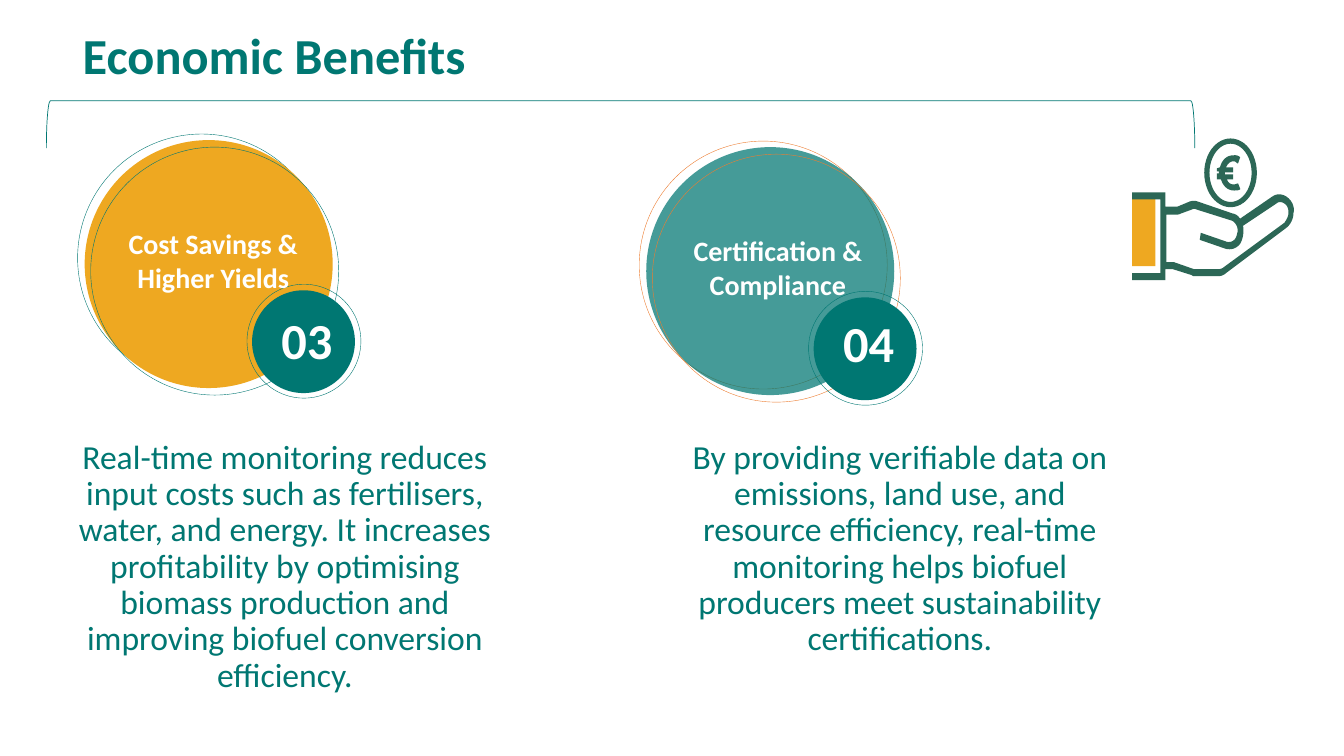
from lxml.etree import SubElement
from pptx import Presentation
from pptx.dml.color import RGBColor
from pptx.enum.shapes import MSO_SHAPE
from pptx.enum.text import MSO_ANCHOR, PP_ALIGN
from pptx.oxml.ns import qn
from pptx.util import Pt

PX = 9144
COLORS = {
    "teal": "007772",
    "amber": "EEA821",
    "orange": "ED7D31",
    "green": "2C6756",
    "white": "FFFFFF",
}

BENEFITS = [
    {
        "number": "03",
        "heading": "Cost Savings & Higher Yields",
        "body": "Real-time monitoring reduces input costs such as fertilisers, water, and energy. "
                "It increases profitability by optimising biomass production and improving "
                "biofuel conversion efficiency.",
        "disc": (84, 139), "disc_color": "amber", "opacity": 100, "ring_color": "teal",
        "heading_at": (84, 220), "number_at": (262, 302), "body_at": (53, 432, 459, 327),
    },
    {
        "number": "04",
        "heading": "Certification & Compliance",
        "body": "By providing verifiable data on emissions, land use, and resource efficiency, "
                "real-time monitoring helps biofuel producers meet sustainability certifications.",
        "disc": (641, 146), "disc_color": "teal", "opacity": 73, "ring_color": "orange",
        "heading_at": (644, 227), "number_at": (819, 305), "body_at": (674, 432, 437, 246),
    },
]

PALM = [
    (1274, 221), (1214, 265), (1213, 266, 1211, 267, 1209, 267), (1186, 267),
    (1185, 267, 1184, 267, 1184, 267), (1164, 260), (1163, 260, 1162, 260, 1161, 260),
    (1157, 260), (1157, 213), (1166, 213), (1168, 213, 1169, 213, 1171, 212),
    (1182, 208), (1184, 207, 1185, 207, 1187, 208), (1222, 219),
    (1226, 221, 1229, 227, 1227, 232), (1226, 238, 1222, 241, 1217, 240),
    (1191, 231), (1190, 238), (1216, 247), (1221, 248, 1226, 247, 1230, 242),
    (1233, 237, 1234, 230, 1233, 224), (1266, 202), (1268, 200, 1271, 200, 1274, 202),
    (1277, 204, 1278, 207, 1278, 211), (1278, 215, 1276, 218, 1274, 221),
]
HAND_OUTLINE = [
    (1282, 202), (1278, 194, 1269, 190, 1262, 195), (1230, 217),
    (1228, 214, 1225, 212, 1223, 212), (1188, 200), (1185, 199, 1183, 199, 1180, 200),
    (1168, 205), (1167, 205, 1167, 205, 1166, 205), (1156, 205), (1156, 191),
    (1123, 191), (1123, 198), (1151, 198), (1151, 271), (1123, 271), (1123, 278),
    (1156, 278), (1156, 267), (1160, 267), (1161, 267, 1162, 267, 1163, 267),
    (1182, 273), (1183, 274, 1184, 274, 1185, 274), (1209, 274),
    (1211, 274, 1214, 273, 1216, 271), (1276, 226), (1280, 223, 1283, 217, 1283, 211),
    (1284, 208, 1283, 205, 1282, 202),
]
EURO_SIGN = [
    (1207, 167), (1210, 166), (1212, 159, 1216, 154, 1224, 154),
    (1226, 154, 1228, 154, 1230, 156), (1228, 162), (1227, 162),
    (1226, 161, 1225, 160, 1224, 160), (1220, 160, 1218, 162, 1216, 166),
    (1223, 166), (1223, 171), (1215, 171), (1215, 173), (1223, 173), (1223, 178),
    (1217, 178), (1218, 181, 1220, 183, 1224, 183), (1225, 183, 1227, 182, 1228, 182),
    (1230, 187), (1230, 188), (1228, 189, 1226, 189, 1224, 189),
    (1217, 189, 1213, 184, 1211, 178), (1207, 178), (1207, 172), (1209, 172),
    (1209, 170), (1207, 170),
]


def flatten(contour, steps=8):
    points = [contour[0]]
    for segment in contour[1:]:
        if len(segment) == 2:
            points.append(segment)
            continue
        controls = [points[-1], segment[:2], segment[2:4], segment[4:]]
        for step in range(1, steps + 1):
            t = step / steps
            weights = ((1 - t) ** 3, 3 * t * (1 - t) ** 2, 3 * t * t * (1 - t), t ** 3)
            points.append(tuple(
                sum(weight * point[axis] for weight, point in zip(weights, controls))
                for axis in (0, 1)))
    return [(round(x * PX), round(y * PX)) for x, y in points]


class SlideBuilder:
    font = "Calibri"

    def __init__(self, page):
        self.shapes = page.shapes

    def paint(self, shape, fill=None, line=None, weight=0.28, opacity=100):
        shape.shadow.inherit = False
        if fill:
            shape.fill.solid()
            shape.fill.fore_color.rgb = RGBColor.from_string(COLORS[fill])
            if opacity < 100:
                color = shape.fill._xPr.find(".//" + qn("a:srgbClr"))
                SubElement(color, qn("a:alpha")).set("val", str(opacity * 1000))
        else:
            shape.fill.background()
        if line:
            shape.line.color.rgb = RGBColor.from_string(COLORS[line])
            shape.line.width = Pt(weight)
        else:
            shape.line.fill.background()

    def shape(self, kind, left, top, width, height, **style):
        shape = self.shapes.add_shape(kind, left * PX, top * PX, width * PX, height * PX)
        self.paint(shape, **style)
        return shape

    def circle(self, left, top, size, **style):
        return self.shape(MSO_SHAPE.OVAL, left, top, size, size, **style)

    def outline(self, contours, fill):
        first, *others = [flatten(contour) for contour in contours]
        builder = self.shapes.build_freeform(*first[0], scale=1.0)
        builder.add_line_segments(first[1:], close=True)
        for points in others:
            builder.move_to(*points[0])
            builder.add_line_segments(points[1:], close=True)
        self.paint(builder.convert_to_shape(), fill=fill)

    def text(self, content, left, top, width, height, size, color, bold=False, spacing=None):
        box = self.shapes.add_textbox(left * PX, top * PX, width * PX, height * PX)
        frame = box.text_frame
        frame.word_wrap = True
        frame.vertical_anchor = MSO_ANCHOR.TOP
        para = frame.paragraphs[0]
        para.alignment = PP_ALIGN.CENTER
        para.line_spacing = spacing
        span = para.add_run()
        span.text = content
        span.font.name = self.font
        span.font.size = Pt(size)
        span.font.bold = bold
        span.font.color.rgb = RGBColor.from_string(COLORS[color])

    def benefit(self, item):
        left, top = item["disc"]
        self.circle(left - 7, top - 6, 246, line=item["ring_color"])
        self.circle(left, top, 246, fill=item["disc_color"], opacity=item["opacity"])
        self.circle(left + 6, top + 7, 246, line=item["ring_color"])
        self.circle(left + 166, top + 149, 102, fill="teal")
        self.circle(left + 161, top + 143, 113, line="teal")
        self.text(item["heading"], *item["heading_at"], 255, 77, 20, "white", bold=True)
        self.text(item["number"], *item["number_at"], 85, 71, 36, "white", bold=True)
        self.text(item["body"], *item["body_at"], 24, "teal", spacing=0.9)

    def hand_with_coin(self):
        page_shapes = self.shapes
        self.shapes = page_shapes.add_group_shape().shapes
        self.shape(MSO_SHAPE.RECTANGLE, 1123, 194, 23, 70, fill="amber")
        self.outline([PALM, HAND_OUTLINE], "green")
        self.shape(MSO_SHAPE.OVAL, 1197, 140, 47, 63, line="green", weight=3.75)
        self.outline([EURO_SIGN], "green")
        self.shapes = page_shapes


def main():
    deck = Presentation()
    deck.slide_width = 1333 * PX
    deck.slide_height = 750 * PX
    page = deck.slides.add_slide(deck.slide_layouts[6])
    builder = SlideBuilder(page)
    builder.text("Economic Benefits", 41, 26, 462, 110, 36, "teal", bold=True, spacing=0.9)
    bracket = builder.shape(MSO_SHAPE.LEFT_BRACKET, 592, -446, 47, 1139, line="teal", weight=0.5)
    bracket.rotation = 90
    for item in BENEFITS:
        builder.benefit(item)
    builder.hand_with_coin()
    deck.save("out.pptx")


if __name__ == "__main__":
    main()
